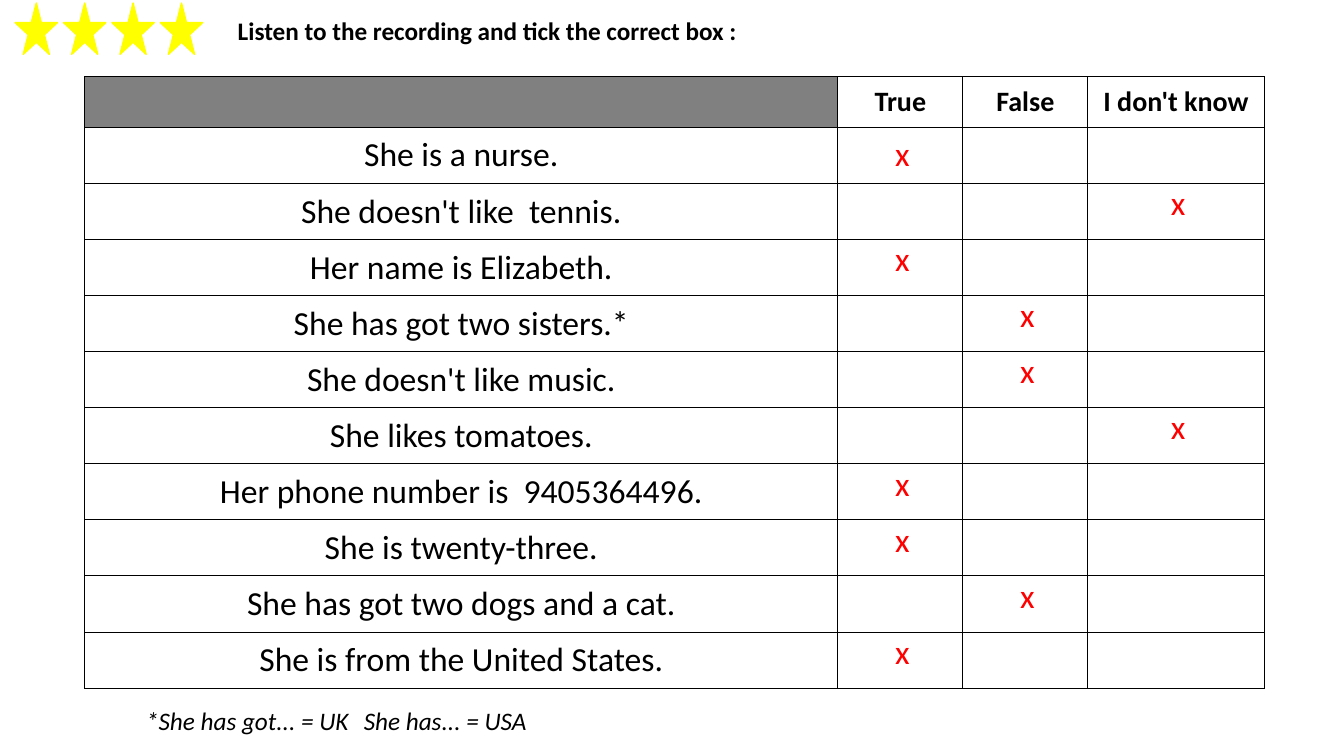
from dataclasses import dataclass

from lxml import etree
from pptx import Presentation
from pptx.dml.color import RGBColor
from pptx.enum.shapes import MSO_SHAPE
from pptx.enum.text import MSO_ANCHOR, PP_ALIGN
from pptx.oxml.ns import qn
from pptx.util import Inches, Pt

STAR = MSO_SHAPE.STAR_5_POINT
MIDDLE = MSO_ANCHOR.MIDDLE
LEFT, CENTER = PP_ALIGN.LEFT, PP_ALIGN.CENTER


@dataclass(frozen=True)
class Theme:
    """Colours, font and type sizes of the slide."""
    font: str = "Calibri"
    ink: str = "000000"
    paper: str = "FFFFFF"
    gray: str = "808080"
    mark: str = "FF0000"
    star: str = "FFFF00"
    small: int = 18
    head: int = 20
    body: int = 24
    rule: float = 0.75


THEME = Theme()
HEADS = ["", "True", "False", "I don't know"]
ITEMS = [
    ("She is a nurse.", 1),
    ("She doesn't like  tennis.", 3),
    ("Her name is Elizabeth.", 1),
    ("She has got two sisters.*", 2),
    ("She doesn't like music.", 2),
    ("She likes tomatoes.", 3),
    ("Her phone number is  9405364496.", 1),
    ("She is twenty-three.", 1),
    ("She has got two dogs and a cat.", 2),
    ("She is from the United States.", 1),
]
WIDTHS = [7.47, 1.24, 1.24, 1.75]
HEAD_ROW = 0.5


def write(para, text, size, color=THEME.ink, align=LEFT, bold=False, italic=False):
    """Put styled text in a paragraph."""
    para.text = text
    para.alignment = align
    font = para.font
    font.name, font.size = THEME.font, Pt(size)
    font.bold, font.italic = bold, italic
    font.color.rgb = RGBColor.from_string(color)


def add_label(slide, box, text, **style):
    """Add a one-line text box and return its paragraph."""
    frame = slide.shapes.add_textbox(*map(Inches, box)).text_frame
    frame.word_wrap = False
    para = frame.paragraphs[0]
    write(para, text, THEME.small, **style)
    return para


def add_note(slide, box):
    """Add the footnote, its halves set apart by a tab stop."""
    para = add_label(slide, box, "*She has got... = UK\tShe has... = USA", italic=True)
    tabs = etree.Element(qn("a:tabLst"))
    etree.SubElement(tabs, qn("a:tab"), pos=str(Inches(2.16)), algn="l")
    para.font
    para._p.pPr.insert(0, tabs)


def add_stars(slide, box, count=4, step=0.48):
    """Add a group of evenly spaced stars."""
    left, top, width, height = box
    group = slide.shapes.add_group_shape()
    for i in range(count):
        star = group.shapes.add_shape(
            STAR, *map(Inches, (left + i * step, top, width, height)))
        star.shadow.inherit = False
        color = RGBColor.from_string(THEME.star)
        star.fill.solid()
        star.fill.fore_color.rgb = color
        star.line.color.rgb = color
        star.line.width = Pt(1)


def style_cell(cell, fill):
    """Give a cell its borders, fill and margins."""
    props = cell._tc.get_or_add_tcPr()
    for side in ("lnL", "lnR", "lnT", "lnB"):
        line = etree.SubElement(props, qn(f"a:{side}"), w=str(Pt(THEME.rule)))
        paint = etree.SubElement(line, qn("a:solidFill"))
        etree.SubElement(paint, qn("a:srgbClr"), val=THEME.ink)
    cell.fill.solid()
    cell.fill.fore_color.rgb = RGBColor.from_string(fill)
    cell.vertical_anchor = MIDDLE
    cell.margin_left = cell.margin_right = cell.margin_top = Inches(0.01)
    cell.margin_bottom = 0


def add_quiz(slide, box):
    """Add the table of statements with their ticks."""
    frame = slide.shapes.add_table(
        len(ITEMS) + 1, len(HEADS), *map(Inches, box))
    table = frame.table
    table.first_row = table.horz_banding = False
    for col, width in zip(table.columns, WIDTHS):
        col.width = Inches(width)
    for row in table.rows:
        row.height = Inches((box[3] - HEAD_ROW) / len(ITEMS))
    table.rows[0].height = Inches(HEAD_ROW)
    for cell in table.iter_cells():
        style_cell(cell, THEME.paper)
    corner = table.cell(0, 0)
    corner.fill.fore_color.rgb = RGBColor.from_string(THEME.gray)
    for c, head in enumerate(HEADS[1:], 1):
        write(table.cell(0, c).text_frame.paragraphs[0], head, THEME.head,
              align=CENTER, bold=True)
    for r, (text, pick) in enumerate(ITEMS, 1):
        write(table.cell(r, 0).text_frame.paragraphs[0], text, THEME.body,
              align=CENTER)
        cell = table.cell(r, pick)
        write(cell.text_frame.paragraphs[0], "x", THEME.body, THEME.mark, CENTER)
        cell.margin_left = Inches(0.05)
        if r > 1:
            cell.margin_top, cell.margin_bottom = 0, Inches(0.14)


def main():
    """Build and save the slide."""
    deck = Presentation()
    deck.slide_width, deck.slide_height = Inches(13.33), Inches(7.5)
    slide = deck.slides.add_slide(deck.slide_layouts[6])
    add_label(slide, (2.26, 0.1, 5.27, 0.4),
              "Listen to the recording and tick the correct box :", bold=True)
    add_quiz(slide, (0.84, 0.76, 11.7, 6.07))
    add_note(slide, (1.35, 6.95, 4.05, 0.4))
    add_stars(slide, (0.15, 0.03, 0.42, 0.51))
    deck.save("out.pptx")


if __name__ == "__main__":
    main()
